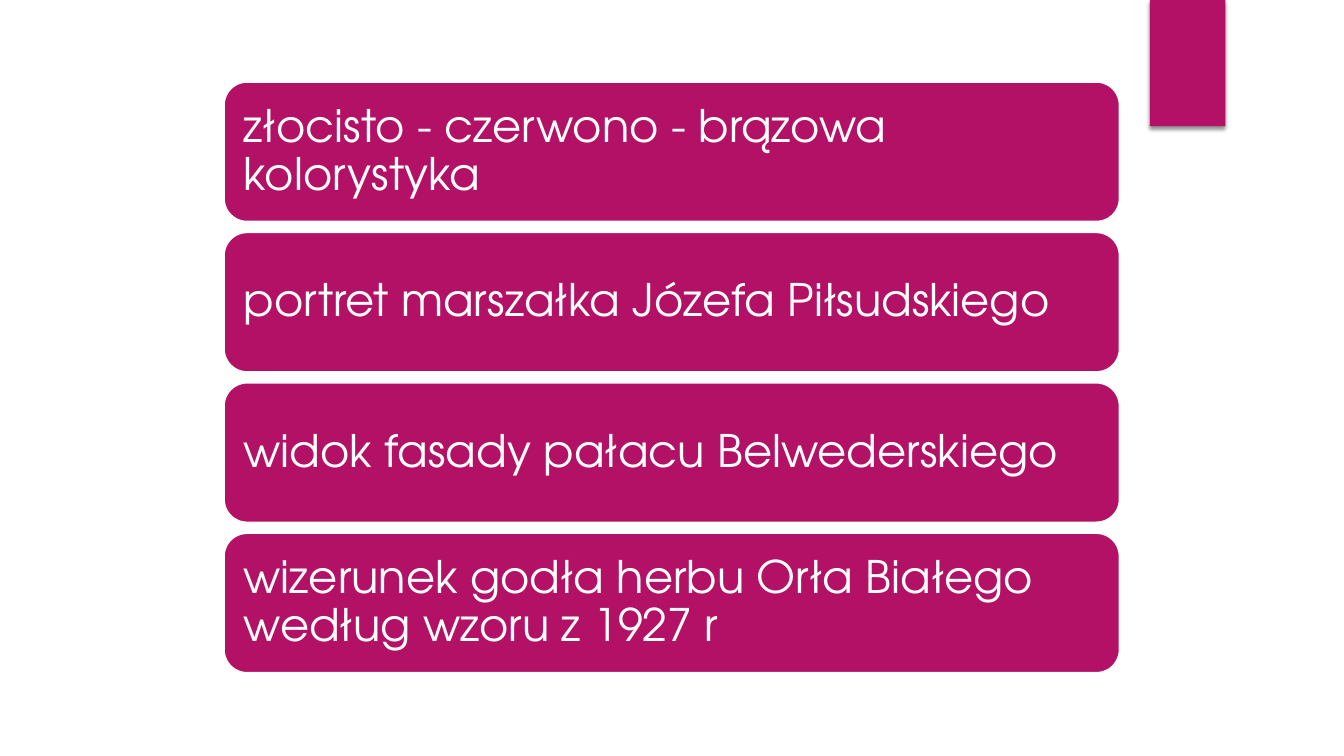
from dataclasses import dataclass

from lxml import etree
from pptx import Presentation
from pptx.dml.color import RGBColor
from pptx.enum import shapes, text
from pptx.oxml import ns
from pptx.util import Cm, Pt


@dataclass(frozen=True)
class Theme:
    accent: RGBColor = RGBColor(0xB3, 0x11, 0x66)
    light: RGBColor = RGBColor(0xFF, 0xFF, 0xFF)
    shadow: str = "000000"
    font: str = "TeX Gyre Adventor"
    card_size: Pt = Pt(32)
    outline: Pt = Pt(1.5)


THEME = Theme()
FEATURES = (
    "złocisto - czerwono - brązowa kolorystyka",
    "portret marszałka Józefa Piłsudskiego",
    "widok fasady pałacu Belwederskiego",
    "wizerunek godła herbu Orła Białego według wzoru z 1927 r",
)
CARD_LEFT, CARD_TOP = Cm(5.64), Cm(2.06)
CARD_WIDTH, CARD_HEIGHT = Cm(22.58), Cm(3.53)
CARD_STEP = Cm(3.79)
CARD_INSET = Cm(0.33)


def add_filled_shape(page, kind, left, top, width, height):
    box = page.shapes.add_shape(kind, left, top, width, height)
    box.shadow.inherit = False
    box.fill.solid()
    box.fill.fore_color.rgb = THEME.accent
    return box


def add_soft_shadow(box):
    effects = box.element.spPr.find(ns.qn("a:effectLst"))
    shadow = etree.SubElement(
        effects, ns.qn("a:outerShdw"), blurRad=str(Pt(3)), dist=str(Pt(2)),
        dir=str(90 * 60000), algn="ctr", rotWithShape="0",
    )
    color = etree.SubElement(shadow, ns.qn("a:srgbClr"), val=THEME.shadow)
    etree.SubElement(color, ns.qn("a:alpha"), val="45000")


def add_ribbon(page):
    ribbon = add_filled_shape(
        page, shapes.MSO_SHAPE.RECTANGLE, Cm(28.98), Cm(0), Cm(1.9), Cm(3.18)
    )
    ribbon.line.fill.background()
    add_soft_shadow(ribbon)


def add_card(page, top, wording):
    card = add_filled_shape(
        page, shapes.MSO_SHAPE.ROUNDED_RECTANGLE,
        CARD_LEFT, top, CARD_WIDTH, CARD_HEIGHT,
    )
    card.line.color.rgb = THEME.light
    card.line.width = THEME.outline
    frame = card.text_frame
    frame.word_wrap = True
    frame.vertical_anchor = text.MSO_ANCHOR.MIDDLE
    frame.margin_left = frame.margin_right = CARD_INSET
    frame.margin_top = frame.margin_bottom = CARD_INSET
    para = frame.paragraphs[0]
    para.text = wording
    para.alignment = text.PP_ALIGN.LEFT
    para.line_spacing = 0.9
    para.font.name = THEME.font
    para.font.size = THEME.card_size
    para.font.color.rgb = THEME.light


def main():
    deck = Presentation()
    deck.slide_width, deck.slide_height = Cm(33.87), Cm(19.05)
    page = deck.slides.add_slide(deck.slide_layouts.get_by_name("Blank"))
    add_ribbon(page)
    for index, wording in enumerate(FEATURES):
        add_card(page, CARD_TOP + index * CARD_STEP, wording)
    deck.save("out.pptx")


if __name__ == "__main__":
    main()
